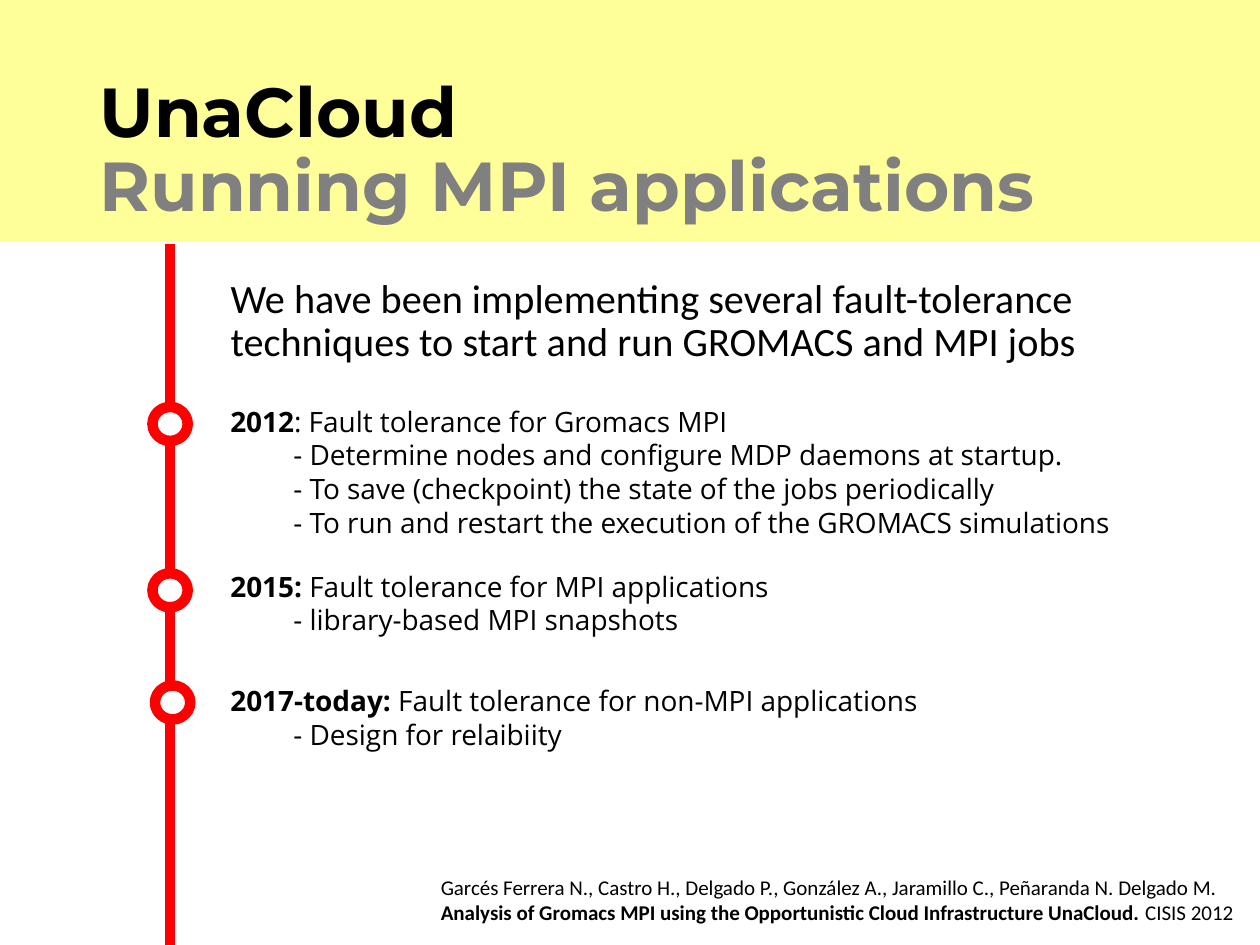
from dataclasses import dataclass

from lxml.etree import SubElement
from pptx import Presentation
from pptx.dml.color import RGBColor
from pptx.enum.shapes import MSO_CONNECTOR, MSO_SHAPE
from pptx.enum.text import MSO_ANCHOR, MSO_AUTO_SIZE, PP_ALIGN
from pptx.oxml.ns import qn
from pptx.util import Inches, Pt

BLACK = RGBColor(0x00, 0x00, 0x00)
GRAY = RGBColor(0x80, 0x80, 0x80)
WHITE = RGBColor(0xFF, 0xFF, 0xFF)
RED = RGBColor(0xFF, 0x00, 0x00)
YELLOW = RGBColor(0xFF, 0xFF, 0x99)

TEXT_LEFT = 1.73
RING_WIDTH, RING_HEIGHT = 0.28, 0.27


@dataclass
class Milestone:
    year: str
    title: str
    steps: list[str]
    top: float
    width: float
    height: float
    ring_left: float
    ring_top: float


MILESTONES = [
    Milestone("2012", ": Fault tolerance for Gromacs MPI", [
        "Determine nodes and configure MDP daemons at startup.",
        "To save (checkpoint) the state of the jobs periodically",
        "To run and restart the execution of the GROMACS simulations",
    ], 3.16, 7.26, 1.18, 1.21, 3.23),
    Milestone("2015: ", "Fault tolerance for MPI applications",
              ["library-based MPI snapshots"], 4.47, 4.52, 0.64, 1.21, 4.55),
    Milestone("2017-today: ", "Fault tolerance for non-MPI applications",
              ["Design for relaibiity"], 5.38, 5.72, 0.64, 1.23, 5.44),
]


def add_run(p, text: str, *, font: str, size: float,
            bold: bool = False, color: RGBColor = BLACK) -> None:
    r = p.add_run()
    r.text = text
    r.font.name = font
    r.font.size = Pt(size)
    r.font.bold = bold
    r.font.color.rgb = color


def place(sp, left: float, top: float, width: float, height: float) -> None:
    sp.left, sp.top = Inches(left), Inches(top)
    sp.width, sp.height = Inches(width), Inches(height)


def add_text_box(s, left: float, top: float, width: float, height: float,
                 wrap: bool):
    sp = s.shapes.add_textbox(Inches(left), Inches(top), Inches(width), Inches(height))
    tf = sp.text_frame
    tf.word_wrap = wrap
    tf.auto_size = MSO_AUTO_SIZE.SHAPE_TO_FIT_TEXT
    return tf


def add_band(s) -> None:
    sp = s.shapes.add_shape(MSO_SHAPE.RECTANGLE, 0, 0, Inches(10), Inches(1.92))
    sp.shadow.inherit = False
    sp.fill.solid()
    sp.fill.fore_color.rgb = YELLOW
    sp.line.fill.background()
    tree = s.shapes._spTree
    tree.remove(sp._element)
    tree.insert(2, sp._element)


def add_timeline(s) -> None:
    line = s.shapes.add_connector(MSO_CONNECTOR.STRAIGHT, Inches(1.35), Inches(1.94),
                                  Inches(1.35), Inches(7.5))
    line.line.color.rgb = RED
    line.line.width = Pt(6)
    SubElement(line._element.spPr, qn("a:effectLst"))


def add_title(s) -> None:
    sp = s.shapes.title
    place(sp, 0.69, 0.4, 8.62, 1.45)
    tf = sp.text_frame
    tf.auto_size = MSO_AUTO_SIZE.NONE
    tf.vertical_anchor = MSO_ANCHOR.BOTTOM
    lines = [("UnaCloud", BLACK), ("Running MPI applications", GRAY)]
    for i, (text, color) in enumerate(lines):
        p = tf.add_paragraph() if i else tf.paragraphs[0]
        p.alignment = PP_ALIGN.LEFT
        p.line_spacing = 0.9
        add_run(p, text, font="Montserrat", size=39.6, bold=True, color=color)


def add_intro(s) -> None:
    sp = s.placeholders[1]
    place(sp, TEXT_LEFT, 2.16, 7.88, 4.6)
    tf = sp.text_frame
    tf.auto_size = MSO_AUTO_SIZE.NONE
    p = tf.paragraphs[0]
    pPr = p._p.get_or_add_pPr()
    pPr.set("marL", "0")
    pPr.set("indent", "0")
    SubElement(pPr, qn("a:buNone"))
    p.line_spacing = 0.9
    p.space_before = Pt(0)
    add_run(p, "We have been implementing several fault-tolerance techniques "
               "to start and run GROMACS and MPI jobs", font="Calibri", size=23)


def add_milestone(s, m: Milestone) -> None:
    ring = s.shapes.add_shape(MSO_SHAPE.OVAL, Inches(m.ring_left), Inches(m.ring_top),
                              Inches(RING_WIDTH), Inches(RING_HEIGHT))
    ring.shadow.inherit = False
    ring.fill.solid()
    ring.fill.fore_color.rgb = WHITE
    ring.line.color.rgb = RED
    ring.line.width = Pt(6)

    tf = add_text_box(s, TEXT_LEFT, m.top, m.width, m.height, wrap=False)
    p = tf.paragraphs[0]
    add_run(p, m.year, font="Open Sans", size=16, bold=True)
    add_run(p, m.title, font="Open Sans", size=16)
    for step in m.steps:
        p = tf.add_paragraph()
        p._p.get_or_add_pPr().set("marL", str(Inches(0.5)))
        add_run(p, f"- {step}", font="Open Sans", size=16)


def add_reference(s) -> None:
    tf = add_text_box(s, 3.4, 6.89, 6.66, 0.5, wrap=True)
    add_run(tf.paragraphs[0], "Garcés Ferrera N., Castro H., Delgado P., González A., "
            "Jaramillo C., Peñaranda N. Delgado M.", font="Calibri", size=12)
    p = tf.add_paragraph()
    add_run(p, "Analysis of Gromacs MPI using the Opportunistic Cloud "
               "Infrastructure UnaCloud. ", font="Calibri", size=12, bold=True)
    add_run(p, "CISIS 2012", font="Calibri", size=12)


def main() -> None:
    prs = Presentation()
    prs.slide_width, prs.slide_height = Inches(10), Inches(7.5)
    s = prs.slides.add_slide(prs.slide_layouts[1])
    add_band(s)
    add_title(s)
    add_intro(s)
    add_timeline(s)
    for m in MILESTONES:
        add_milestone(s, m)
    add_reference(s)
    prs.save("out.pptx")


if __name__ == "__main__":
    main()
